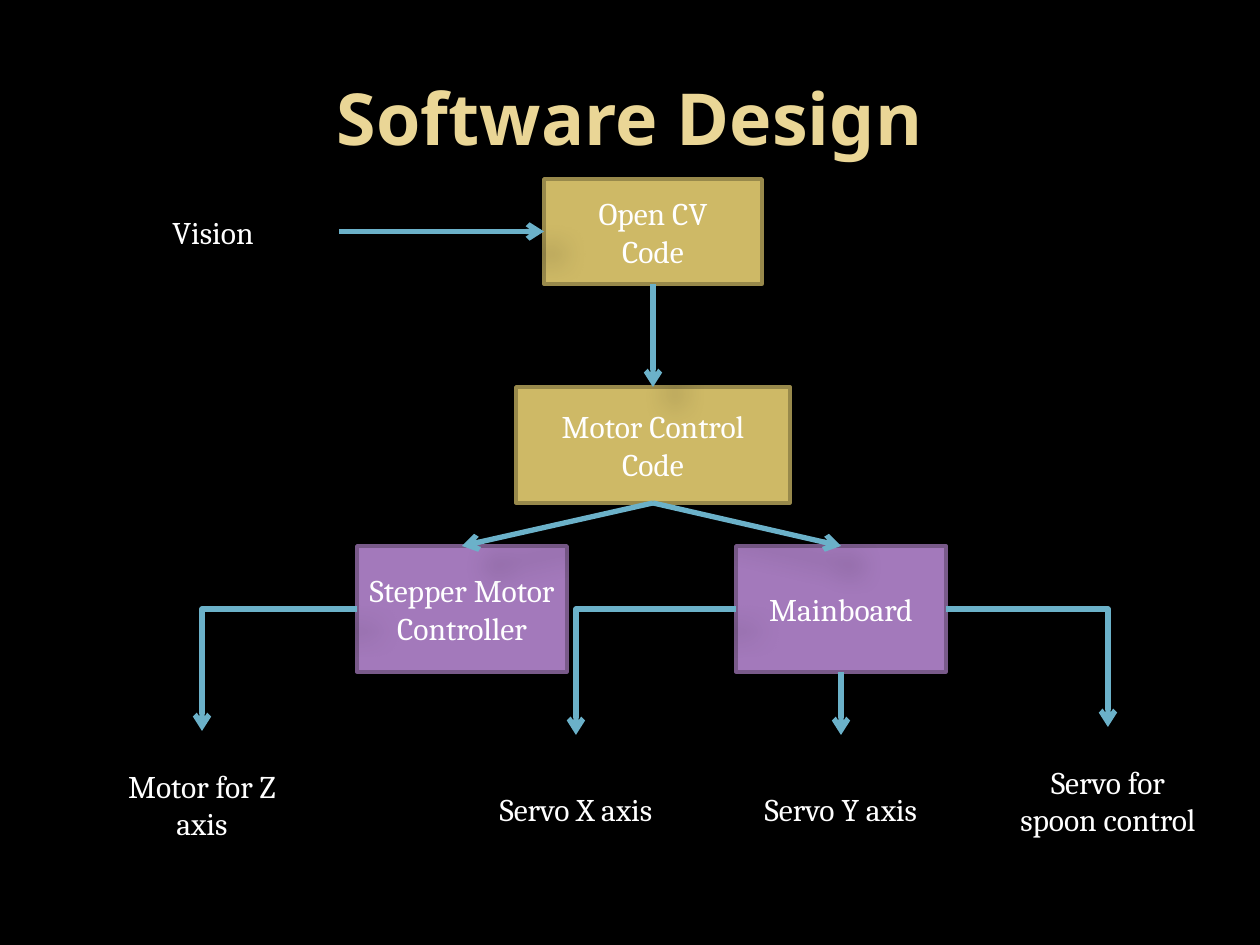
from lxml.etree import SubElement
from pptx import Presentation
from pptx.dml.color import RGBColor
from pptx.enum.shapes import MSO_CONNECTOR, MSO_SHAPE
from pptx.enum.text import MSO_ANCHOR, PP_ALIGN
from pptx.oxml import parse_xml
from pptx.oxml.ns import nsdecls, qn
from pptx.util import Pt

PX = 914400 // 126
COLORS = {
    "background": "000000", "title": "EAD696", "text": "FFFFFF", "arrow": "6BB1C9",
    "gold": "CEB966", "gold line": "98894B",
    "purple": "A379BB", "purple line": "795A8A",
    "label": "000000", "label line": "000000",
}
TOP, LEFT, BOTTOM, RIGHT = range(4)

TITLE = ("Software Design", (63, 38, 1134, 157))

# name: (paragraphs, style, (left, top, width, height))
NODES = {
    "vision": (["Vision"], "label", (87, 158, 252, 147)),
    "opencv": (["Open CV", "Code"], "gold", (544, 179, 218, 105)),
    "motor": (["Motor Control Code"], "gold", (516, 387, 274, 116)),
    "stepper": (["Stepper Motor Controller"], "purple", (357, 546, 210, 126)),
    "board": (["Mainboard"], "purple", (736, 546, 210, 126)),
    "z axis": (["Motor for Z axis"], "label", (82, 731, 240, 147)),
    "x axis": (["Servo X axis"], "label", (459, 735, 234, 147)),
    "y axis": (["Servo Y axis"], "label", (729, 735, 224, 147)),
    "spoon": (["Servo for spoon control"], "label", (998, 727, 220, 147)),
}

# (from, side, to, side)
ARROWS = [
    ("vision", RIGHT, "opencv", LEFT),
    ("opencv", BOTTOM, "motor", TOP),
    ("motor", BOTTOM, "stepper", TOP),
    ("motor", BOTTOM, "board", TOP),
    ("stepper", LEFT, "z axis", TOP),
    ("board", LEFT, "x axis", TOP),
    ("board", BOTTOM, "y axis", TOP),
    ("board", RIGHT, "spoon", TOP),
]


def rgb(name):
    return RGBColor.from_string(COLORS[name])


def write(shape, lines, font, size, color, bold=False):
    tf = shape.text_frame
    tf.word_wrap = True
    tf.vertical_anchor = MSO_ANCHOR.MIDDLE
    tf.text = "\n".join(lines)
    for p in tf.paragraphs:
        p.alignment = PP_ALIGN.CENTER
        p.font.name, p.font.size, p.font.bold = font, Pt(size), bold
        p.font.color.rgb = rgb(color)


def add_node(lines, style, box):
    kind = MSO_SHAPE.ROUNDED_RECTANGLE if style == "label" else MSO_SHAPE.RECTANGLE
    s = slide.shapes.add_shape(kind, *(v * PX for v in box))
    s.shadow.inherit = False
    s.fill.solid()
    s.fill.fore_color.rgb = rgb(style)
    s.line.color.rgb = rgb(style + " line")
    s.line.width = Pt(2)
    write(s, lines, "Cambria", 18, "text")
    return s


def add_arrow(start, start_side, end, end_side):
    # An arrow that leaves sideways and enters from above turns one corner
    bent = start_side in (LEFT, RIGHT) and end_side == TOP
    kind = MSO_CONNECTOR.ELBOW if bent else MSO_CONNECTOR.STRAIGHT
    c = slide.shapes.add_connector(kind, 0, 0, 0, 0)
    c.begin_connect(start, start_side)
    c.end_connect(end, end_side)
    c.line.color.rgb = rgb("arrow")
    c.line.width = Pt(3)
    sp_pr = c._element.spPr
    if bent:
        sp_pr.find(qn("a:prstGeom")).set("prst", "bentConnector2")
    SubElement(sp_pr.find(qn("a:ln")), qn("a:tailEnd"), type="arrow")
    sp_pr.append(parse_xml(
        f'<a:effectLst {nsdecls("a")}>'
        '<a:outerShdw blurRad="190500" dist="228600" dir="2700000">'
        '<a:srgbClr val="000000"><a:alpha val="26000"/></a:srgbClr>'
        '</a:outerShdw></a:effectLst>'))


prs = Presentation()
prs.slide_width, prs.slide_height = 1260 * PX, 945 * PX
slide = prs.slides.add_slide(prs.slide_layouts[6])
slide.background.fill.solid()
slide.background.fill.fore_color.rgb = rgb("background")

# Title
text, box = TITLE
title = slide.shapes.add_textbox(*(v * PX for v in box))
write(title, [text], "Noto Sans", 41, "title", bold=True)

# Boxes and labels, then the arrows between them
nodes = {name: add_node(*node) for name, node in NODES.items()}
for start, start_side, end, end_side in ARROWS:
    add_arrow(nodes[start], start_side, nodes[end], end_side)

prs.save("out.pptx")
